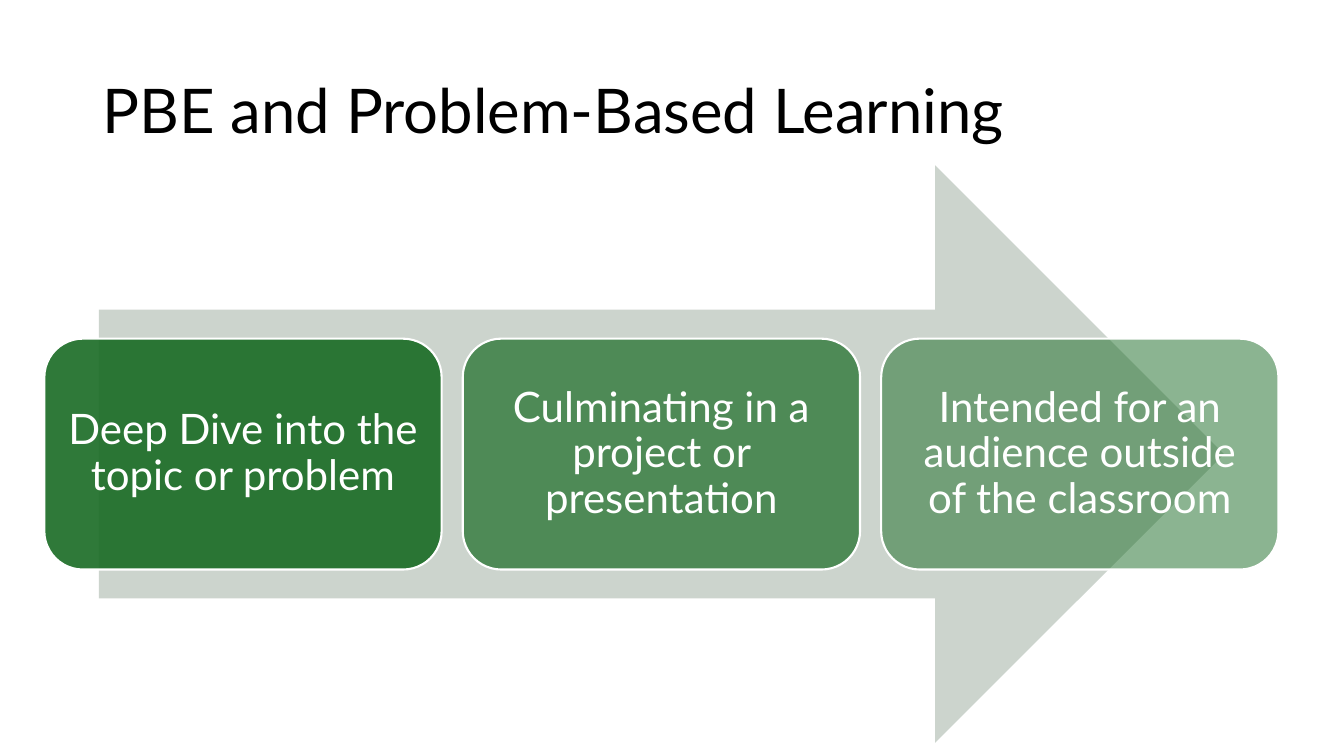
"""Build the slide on PBE and problem-based learning."""
from lxml.etree import SubElement
from pptx import Presentation
from pptx.dml.color import RGBColor
from pptx.enum.shapes import MSO_SHAPE
from pptx.enum.text import MSO_ANCHOR, MSO_AUTO_SIZE, PP_ALIGN
from pptx.oxml.ns import qn
from pptx.util import Inches, Pt

BLACK = RGBColor(0x00, 0x00, 0x00)
WHITE = RGBColor(0xFF, 0xFF, 0xFF)
GREEN = RGBColor(0x19, 0x6B, 0x24)
PALE = RGBColor(0xCC, 0xD4, 0xCD)

LEFT, STEP = 0.44, 4.15
STAGES = [
    ("Deep Dive into the topic or problem", 90),
    ("Culminating in a project or presentation", 70),
    ("Intended for an audience outside of the classroom", 50),
]


def write(shape, text, size, color, align, inset):
    frame = shape.text_frame
    frame.text = text
    form = {
        "word_wrap": True,
        "auto_size": MSO_AUTO_SIZE.NONE,
        "vertical_anchor": MSO_ANCHOR.MIDDLE,
        "margin_left": Inches(inset),
        "margin_right": Inches(inset),
        "margin_top": Inches(inset),
        "margin_bottom": Inches(inset),
    }
    for key, value in form.items():
        setattr(frame, key, value)
    para = frame.paragraphs[0]
    para.alignment = align
    para.line_spacing = 0.9
    for key, value in {"name": "Lato", "size": Pt(size)}.items():
        setattr(para.font, key, value)
    para.font.color.rgb = color


def draw(kind, x, y, w, h, color):
    shape = slide.shapes.add_shape(kind, Inches(x), Inches(y), Inches(w), Inches(h))
    shape.shadow.inherit = False
    shape.fill.solid()
    shape.fill.fore_color.rgb = color
    return shape


deck = Presentation()
deck.slide_width = Inches(13.33)
deck.slide_height = Inches(7.5)
slide = deck.slides.add_slide(deck.slide_layouts[5])

title = slide.shapes.title
place = {"left": 0.92, "top": 0.4, "width": 11.5, "height": 1.45}
for key, value in place.items():
    setattr(title, key, Inches(value))
write(title, "PBE and Problem-Based Learning", 44, BLACK, PP_ALIGN.LEFT, 0.1)

arrow = draw(MSO_SHAPE.RIGHT_ARROW, 0.98, 1.64, 11.16, 5.73, PALE)
arrow.line.fill.background()

for i, (text, alpha) in enumerate(STAGES):
    box = draw(MSO_SHAPE.ROUNDED_RECTANGLE, LEFT + i * STEP, 3.36, 3.94, 2.29, GREEN)
    box.line.color.rgb = WHITE
    box.line.width = Pt(1.5)
    tint = box.fill._xPr.find(qn("a:solidFill"))[0]
    SubElement(tint, qn("a:alpha"), val=str(alpha * 1000))
    write(box, text, 30, WHITE, PP_ALIGN.CENTER, 0.12)

deck.save("out.pptx")
